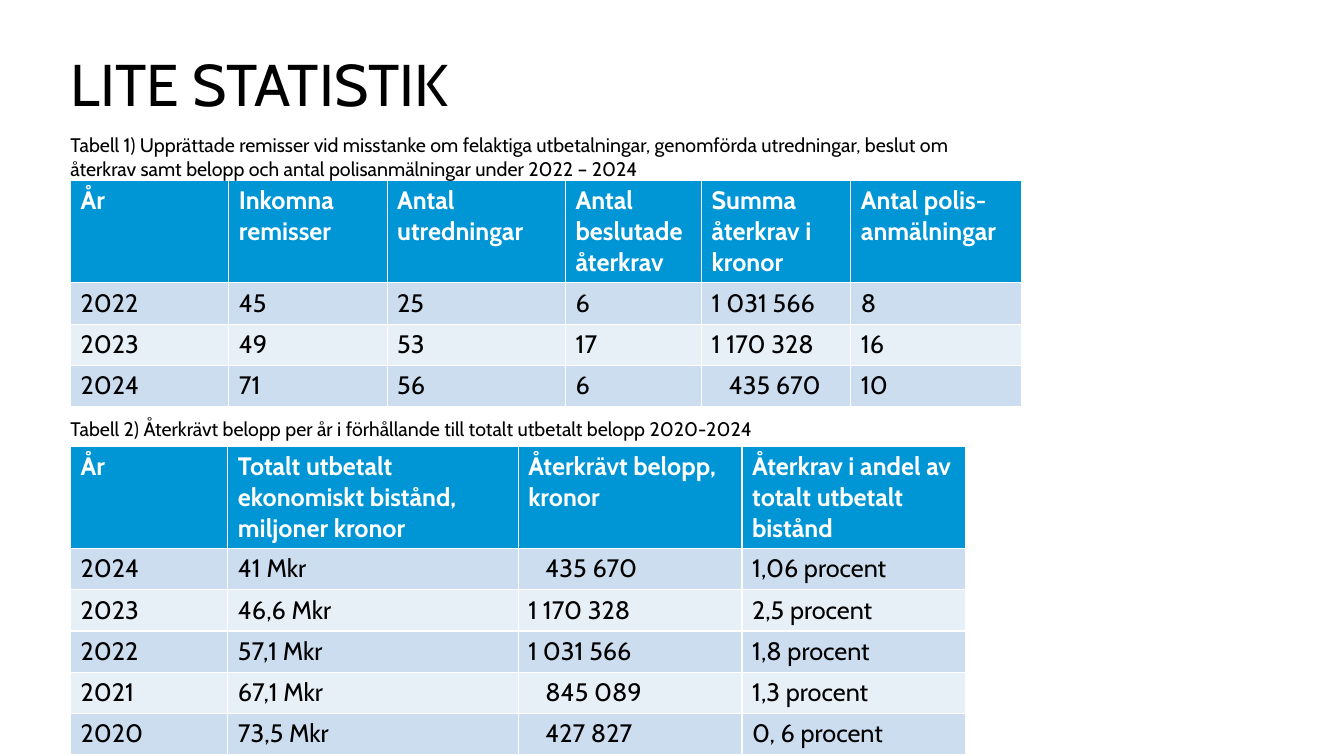
import dataclasses

import pptx
import pptx.dml.color
import pptx.enum.text
import pptx.util

Inches = pptx.util.Inches
Pt = pptx.util.Pt
RGB = pptx.dml.color.RGBColor.from_string


@dataclasses.dataclass(frozen=True)
class Theme:
    font: str = "Cabin"
    ink: str = "000000"
    header_ink: str = "FFFFFF"
    header_fill: str = "0096D6"
    bands: tuple = ("CCDDF0", "E7EFF7")
    title_size: int = 42
    table_size: int = 18
    caption_size: int = 14


THEME = Theme()
HEADER_HEIGHT = 1.01
ROW_HEIGHT = 0.41
CELL_MARGIN = 0.1
SHORT_AMOUNT_INDENT = 0.17  # lines amounts below a million up with the others

CASES = [
    ("År", "Inkomna remisser", "Antal utredningar", "Antal beslutade återkrav",
     "Summa återkrav i kronor", "Antal polis-anmälningar"),
    ("2022", "45", "25", "6", "1 031 566", "8"),
    ("2023", "49", "53", "17", "1 170 328", "16"),
    ("2024", "71", "56", "6", "435 670", "10"),
]
SHARES = [
    ("År", "Totalt utbetalt ekonomiskt bistånd, miljoner kronor",
     "Återkrävt belopp, kronor", "Återkrav i andel av totalt utbetalt bistånd"),
    ("2024", "41 Mkr", "435 670", "1,06 procent"),
    ("2023", "46,6 Mkr", "1 170 328", "2,5 procent"),
    ("2022", "57,1 Mkr", "1 031 566", "1,8 procent"),
    ("2021", "67,1 Mkr", "845 089", "1,3 procent"),
    ("2020", "73,5 Mkr", "427 827", "0, 6 procent"),
]


def add_run(p, text, size, color=THEME.ink, bold=False):
    r = p.add_run()
    r.text = text
    r.font.name = THEME.font
    r.font.size = Pt(size)
    r.font.bold = bold
    r.font.color.rgb = RGB(color)


def add_title(s, text, x, y, w, h):
    sp = s.shapes.title
    sp.left, sp.top, sp.width, sp.height = map(Inches, (x, y, w, h))
    tf = sp.text_frame
    tf.margin_left = tf.margin_right = tf.margin_top = tf.margin_bottom = 0
    tf.auto_size = pptx.enum.text.MSO_AUTO_SIZE.NONE
    tf.vertical_anchor = pptx.enum.text.MSO_ANCHOR.TOP
    p = tf.paragraphs[0]
    p.alignment = pptx.enum.text.PP_ALIGN.LEFT
    p.line_spacing = 0.9
    add_run(p, text, THEME.title_size)


def add_caption(s, text, x, y, w, h):
    sp = s.shapes.add_textbox(*map(Inches, (x, y, w, h)))
    tf = sp.text_frame
    tf.word_wrap = True
    tf.auto_size = pptx.enum.text.MSO_AUTO_SIZE.SHAPE_TO_FIT_TEXT
    add_run(tf.paragraphs[0], text, THEME.caption_size)


def add_statistics(s, rows, widths, amount_col, x, y):
    height = HEADER_HEIGHT + ROW_HEIGHT * (len(rows) - 1)
    frame = s.shapes.add_table(len(rows), len(widths), Inches(x), Inches(y),
                               Inches(sum(widths)), Inches(height))
    table = frame.table
    for column, width in zip(table.columns, widths):
        column.width = Inches(width)
    for i, values in enumerate(rows):
        header = i == 0
        table.rows[i].height = Inches(HEADER_HEIGHT if header else ROW_HEIGHT)
        fill = THEME.header_fill if header else THEME.bands[(i - 1) % 2]
        ink = THEME.header_ink if header else THEME.ink
        for j, value in enumerate(values):
            cell = table.cell(i, j)
            cell.fill.solid()
            cell.fill.fore_color.rgb = RGB(fill)
            short = not header and j == amount_col and len(value) < 9
            indent = SHORT_AMOUNT_INDENT if short else 0
            cell.margin_left = Inches(CELL_MARGIN + indent)
            p = cell.text_frame.paragraphs[0]
            add_run(p, value, THEME.table_size, ink, header)


def main():
    prs = pptx.Presentation()
    prs.slide_width, prs.slide_height = Inches(13.33), Inches(7.5)
    s = prs.slides.add_slide(prs.slide_layouts[5])

    # Title
    add_title(s, "LITE STATISTIK", 0.7, 0.55, 8.49, 1.24)

    # Table 1: referrals, investigations and decisions
    add_statistics(s, CASES, (1.57, 1.57, 1.77, 1.35, 1.48, 1.69), 4, 0.7, 1.79)
    add_caption(s, "Tabell 1) Upprättade remisser vid misstanke om felaktiga "
                "utbetalningar, genomförda utredningar, beslut om återkrav samt "
                "belopp och antal polisanmälningar under 2022 – 2024",
                0.6, 1.27, 9.34, 0.57)

    # Table 2: reclaimed share of total payments
    add_statistics(s, SHARES, (1.56, 2.88, 2.22, 2.22), 2, 0.7, 4.43)
    add_caption(s, "Tabell 2) Återkrävt belopp per år i förhållande till totalt "
                "utbetalt belopp 2020-2024", 0.6, 4.09, 9.34, 0.34)

    prs.save("out.pptx")


if __name__ == "__main__":
    main()
